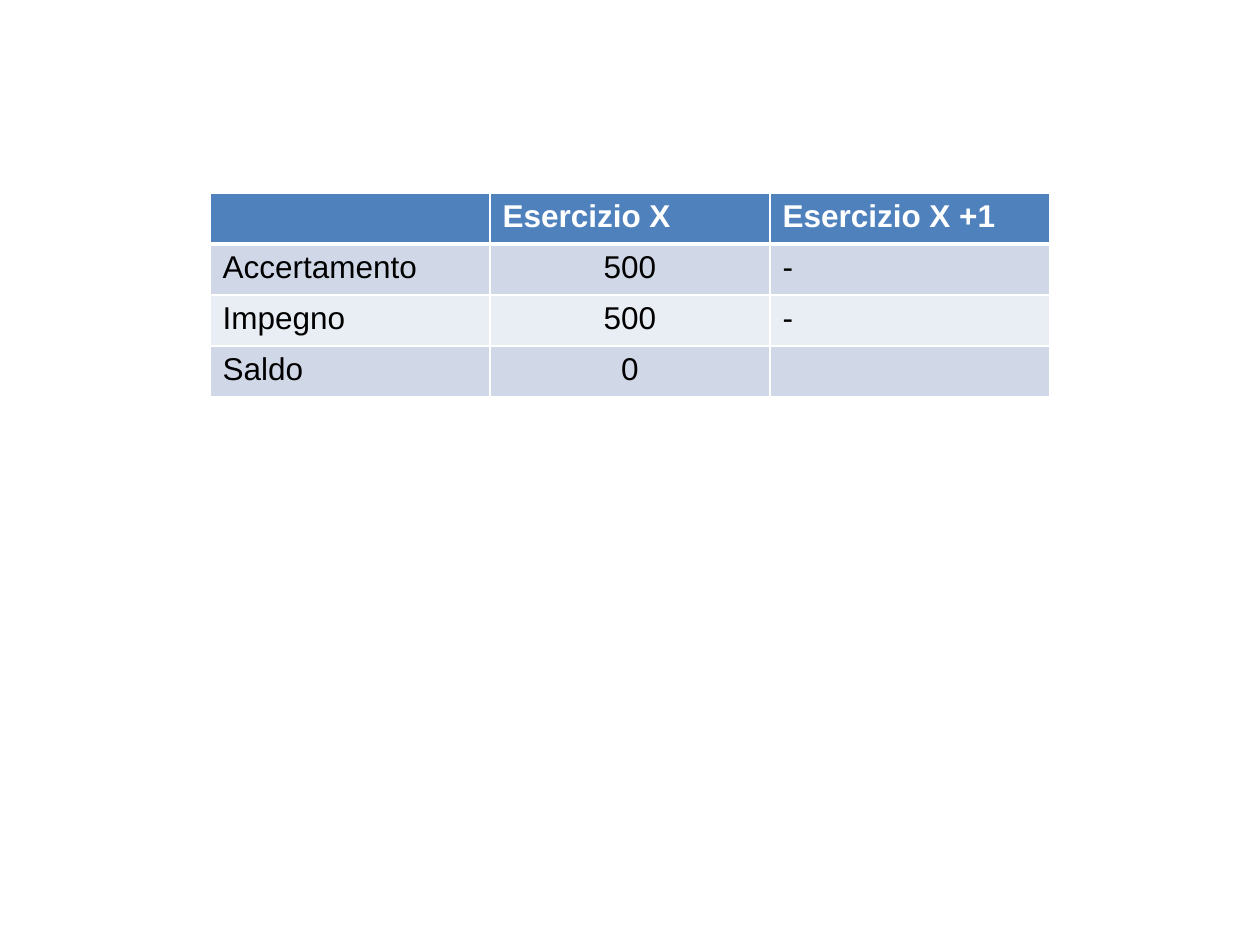
from lxml.etree import SubElement
from pptx import Presentation
from pptx.dml.color import RGBColor
from pptx.enum.text import PP_ALIGN
from pptx.oxml.ns import qn
from pptx.util import Inches, Pt

COLORS = {"header": "4F81BD", "band": "D0D8E8", "plain": "E9EDF4",
          "rule": "FFFFFF", "head_text": "FFFFFF", "text": "000000"}
ROWS = [
    ["", "Esercizio X", "Esercizio X +1"],
    ["Accertamento", "500", "-"],
    ["Impegno", "500", "-"],
    ["Saldo", "0", ""],
]


def write(tf, text, color, size=18, bold=False, align=PP_ALIGN.LEFT):
    p = tf.paragraphs[0]
    p.alignment = align
    p.font.size = Pt(size)
    if text:
        r = p.add_run()
        r.text = text
        r.font.name = "Arial"
        r.font.size = Pt(size)
        r.font.bold = bold
        r.font.color.rgb = RGBColor.from_string(COLORS[color])


def add_borders(cell, top=1, bottom=1):
    tc_pr = cell._tc.get_or_add_tcPr()
    for side, width in (("L", 1), ("R", 1), ("T", top), ("B", bottom)):
        ln = SubElement(tc_pr, qn(f"a:ln{side}"), w=str(Pt(width)))
        fill = SubElement(ln, qn("a:solidFill"))
        SubElement(fill, qn("a:srgbClr"), val=COLORS["rule"])


def balance_table(slide, left, top, width, height):
    shape = slide.shapes.add_table(len(ROWS), len(ROWS[0]), left, top, width, height)
    table = shape.table
    for i, row in enumerate(ROWS):
        head = i == 0
        fill = "header" if head else "band" if i % 2 else "plain"
        for j, text in enumerate(row):
            cell = table.cell(i, j)
            # The rule under the header is heavier
            add_borders(cell, top=3 if i == 1 else 1, bottom=3 if head else 1)
            cell.fill.solid()
            cell.fill.fore_color.rgb = RGBColor.from_string(COLORS[fill])
            centred = j == 1 and not head
            write(cell.text_frame, text, "head_text" if head else "text", bold=head,
                  align=PP_ALIGN.CENTER if centred else PP_ALIGN.LEFT)


def main():
    prs = Presentation()
    prs.slide_width, prs.slide_height = Inches(10), Inches(7.5)
    slide = prs.slides.add_slide(prs.slide_layouts[6])

    # Table: the middle two thirds of the slide's width
    width = prs.slide_width * 2 // 3
    balance_table(slide, (prs.slide_width - width) // 2, Inches(1.53),
                  width, Inches(1.62))
    prs.save("out.pptx")


if __name__ == "__main__":
    main()
